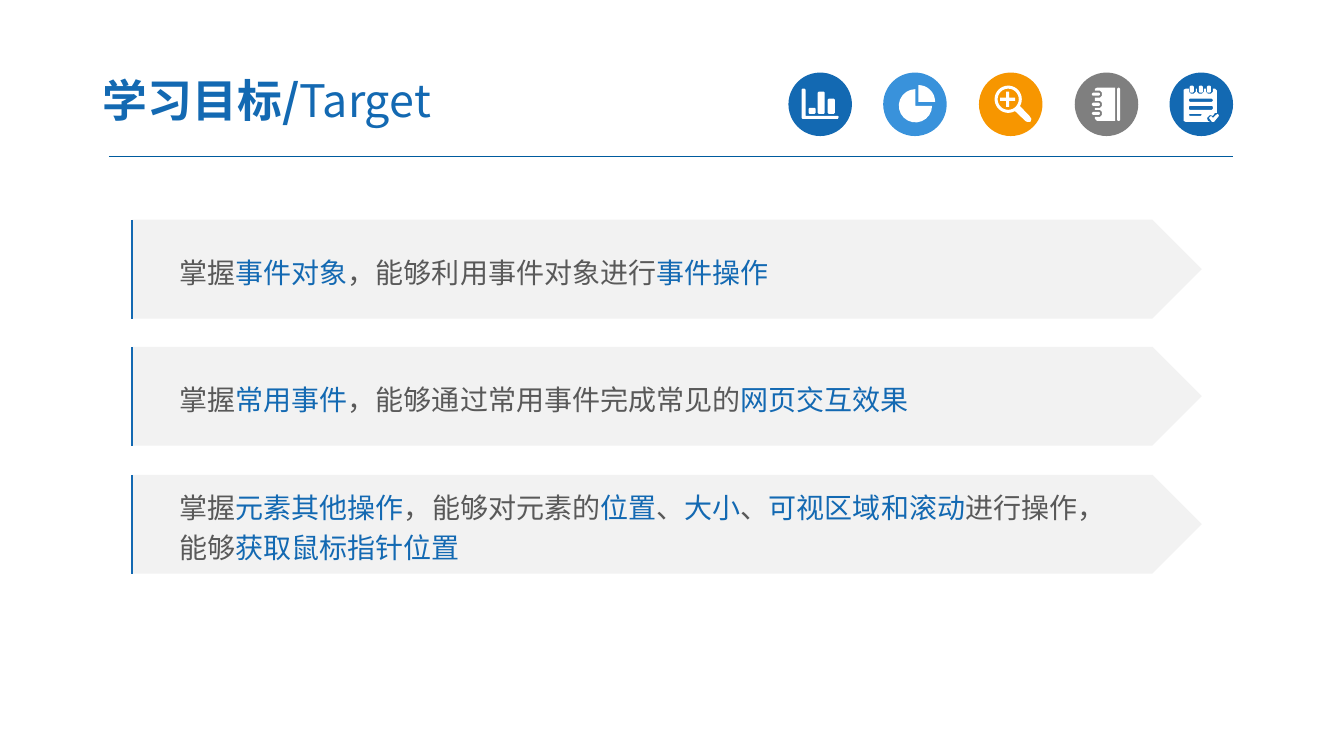
from math import cos, radians, sin

from lxml.etree import SubElement
from pptx import Presentation
from pptx.dml.color import RGBColor
from pptx.enum.shapes import MSO_CONNECTOR, MSO_SHAPE
from pptx.enum.text import MSO_ANCHOR, PP_ALIGN
from pptx.oxml.ns import qn
from pptx.util import Pt

PX = 9144  # EMU per px, 100 px to the inch

THEME = {
    "font": "Noto Sans CJK SC",
    "blue": RGBColor(0x13, 0x69, 0xB2),
    "sky": RGBColor(0x39, 0x92, 0xDB),
    "orange": RGBColor(0xF7, 0x96, 0x00),
    "gray": RGBColor(0x7F, 0x7F, 0x7F),
    "white": RGBColor(0xFF, 0xFF, 0xFF),
    "band": RGBColor(0xF2, 0xF2, 0xF2),
    "text": RGBColor(0x59, 0x59, 0x59),
    "rule": RGBColor(0x00, 0x5B, 0x9E),
    "title_size": Pt(32),
    "body_size": Pt(20),
}


def arc(cx, cy, radius, start, end, steps=16):
    """Points along an arc, in degrees clockwise from the right."""
    angles = [radians(start + (end - start) * i / steps) for i in range(steps + 1)]
    return [(cx + radius * cos(a), cy + radius * sin(a)) for a in angles]


def flat_fill(sp, color):
    sp.shadow.inherit = False
    sp.fill.solid()
    sp.fill.fore_color.rgb = THEME[color]
    sp.line.fill.background()


prs = Presentation()
prs.slide_width, prs.slide_height = 1333 * PX, 750 * PX
s = prs.slides.add_slide(prs.slide_layouts[6])

# Header rule
ln = s.shapes.add_connector(
    MSO_CONNECTOR.STRAIGHT, 108 * PX, 155 * PX, 1223 * PX, 155 * PX)
ln.line.color.rgb = THEME["rule"]
ln.line.width = Pt(0.75)
SubElement(ln._element.spPr, qn("a:effectLst"))

# Icon outlines: a tuple is a box with cut corners, a list is a polygon
chart_icon = [
    [(795, 89), (796, 88), (798, 88), (799, 89), (799, 115), (831, 115),
     (832, 116), (831, 118), (796, 118), (795, 117)],
    (802, 107, 7, 6), (811, 91, 7, 22), (821, 98, 7, 15),
]
pie_icon = [
    [(911, 101), *arc(911, 101, 16.5, -90, 0)],
    [(908, 105), *arc(908, 105, 16.5, 0, 270)],
]
search_icon = [
    [*arc(1000, 98.5, 13.5, 60, 390, 32), (1021, 115), (1023, 118),
     (1022, 121), (1019, 121), (1017, 120)],
    arc(1000, 98.5, 10.5, 0, 360, 32),
    [(998, 91), (1001, 91), (1001, 97), (1007, 97), (1007, 100), (1001, 100),
     (1001, 106), (998, 106), (998, 100), (992, 100), (992, 97), (998, 97)],
]
page = [(1086, 88), (1088, 87), (1106, 87), (1106, 120), (1088, 120), (1086, 118)]
for y in (109, 100, 90):
    page += [(1086, y + 7), (1091, y + 7), (1093, y + 5),
             (1093, y + 2), (1091, y), (1086, y)]
notebook_icon = [page, (1108, 87, 3, 33)]
notebook_icon += [(1083, y, 8, 3) for y in (92, 102, 111)]
sheet = [(1174, 89), (1176, 88)]
for x in (1179, 1187, 1196):
    sheet += [(x, 88), (x, 91), (x + 2, 93), (x + 5, 93), (x + 7, 91), (x + 7, 88)]
sheet += [(1205, 88), (1207, 90), (1207, 112), (1205, 112), (1203, 115),
          (1200, 114), (1197, 117), (1198, 120), (1200, 121), (1176, 121), (1174, 120)]
tick = [(1199, 117), (1201, 115), (1203, 117), (1206, 114), (1208, 113),
        (1209, 115), (1204, 121), (1202, 121)]
notepad_icon = [
    sheet, tick, (1179, 98, 24, 3), (1179, 105, 24, 4), (1179, 113, 13, 2),
    (1180, 85, 4, 7), (1189, 85, 4, 7), (1197, 85, 4, 7),
]
icons = [
    ("blue", chart_icon),
    ("sky", pie_icon),
    ("orange", search_icon),
    ("gray", notebook_icon),
    ("blue", notepad_icon),
]
for i, (color, outlines) in enumerate(icons):
    shapes = s.shapes.add_group_shape().shapes
    left = 782 + round(94.5 * i)
    sp = shapes.add_shape(MSO_SHAPE.OVAL, left * PX, 72 * PX, 63 * PX, 63 * PX)
    flat_fill(sp, color)
    fb = None
    for points in outlines:
        if isinstance(points, tuple):
            x, y, w, h = points
            r, b = x + w, y + h
            points = [(x + 1, y), (r - 1, y), (r, y + 1), (r, b - 1),
                      (r - 1, b), (x + 1, b), (x, b - 1), (x, y + 1)]
        points = [(px * PX, py * PX) for px, py in points]
        if fb is None:
            fb = shapes.build_freeform(*points[0])
        else:
            fb.move_to(*points[0])
        fb.add_line_segments(points[1:], close=True)
    flat_fill(fb.convert_to_shape(), "white")

# Title
tf = s.shapes.add_textbox(89 * PX, 63 * PX, 522 * PX, 72 * PX).text_frame
frame_format = {
    "word_wrap": True, "vertical_anchor": MSO_ANCHOR.MIDDLE,
    "margin_left": 13 * PX, "margin_right": 13 * PX,
    "margin_top": 7 * PX, "margin_bottom": 7 * PX,
}
for name, value in frame_format.items():
    setattr(tf, name, value)
p = tf.paragraphs[0]
p.space_before = Pt(6)
runs = [
    (p, "学习目标/", "title_size", "blue", True),
    (p, "Target", "title_size", "blue", False),
]

# Goal bands: each line alternates plain and highlighted text
goals = [
    (471, [["掌握", "元素其他操作", "，能够对元素的", "位置", "、", "大小", "、",
            "可视区域和滚动", "进行操作，"],
           ["能够", "获取鼠标指针位置"]]),
    (344, [["掌握", "常用事件", "，能够通过常用事件完成常见的", "网页交互效果"]]),
    (218, [["掌握", "事件对象", "，能够利用事件对象进行", "事件操作"]]),
]
for top, lines in goals:
    shapes = s.shapes.add_group_shape().shapes
    sp = shapes.add_shape(
        MSO_SHAPE.PENTAGON, 131 * PX, top * PX, 1061 * PX, 98 * PX)
    flat_fill(sp, "band")
    tf = sp.text_frame
    tf.word_wrap = True
    tf.vertical_anchor = MSO_ANCHOR.MIDDLE
    tf.margin_left = 47 * PX
    for i, line in enumerate(lines):
        p = tf.add_paragraph() if i else tf.paragraphs[0]
        p.alignment = PP_ALIGN.LEFT
        p.line_spacing = 1.2
        for j, text in enumerate(line):
            runs.append((p, text, "body_size", "blue" if j % 2 else "text", False))

    # Left edge
    fb = shapes.build_freeform(131 * PX, (top + 98) * PX)
    fb.add_line_segments([(131 * PX, top * PX)], close=False)
    edge = fb.convert_to_shape()
    edge.shadow.inherit = False
    edge.fill.background()
    edge.line.color.rgb = THEME["blue"]
    edge.line.width = Pt(1.5)

# Text runs
for p, text, size, color, bold in runs:
    r = p.add_run()
    r.text = text
    font_format = {"name": THEME["font"], "size": THEME[size], "bold": bold}
    for name, value in font_format.items():
        setattr(r.font, name, value)
    r.font.color.rgb = THEME[color]
    SubElement(r._r.get_or_add_rPr(), qn("a:ea"), typeface=THEME["font"])

prs.save("out.pptx")
